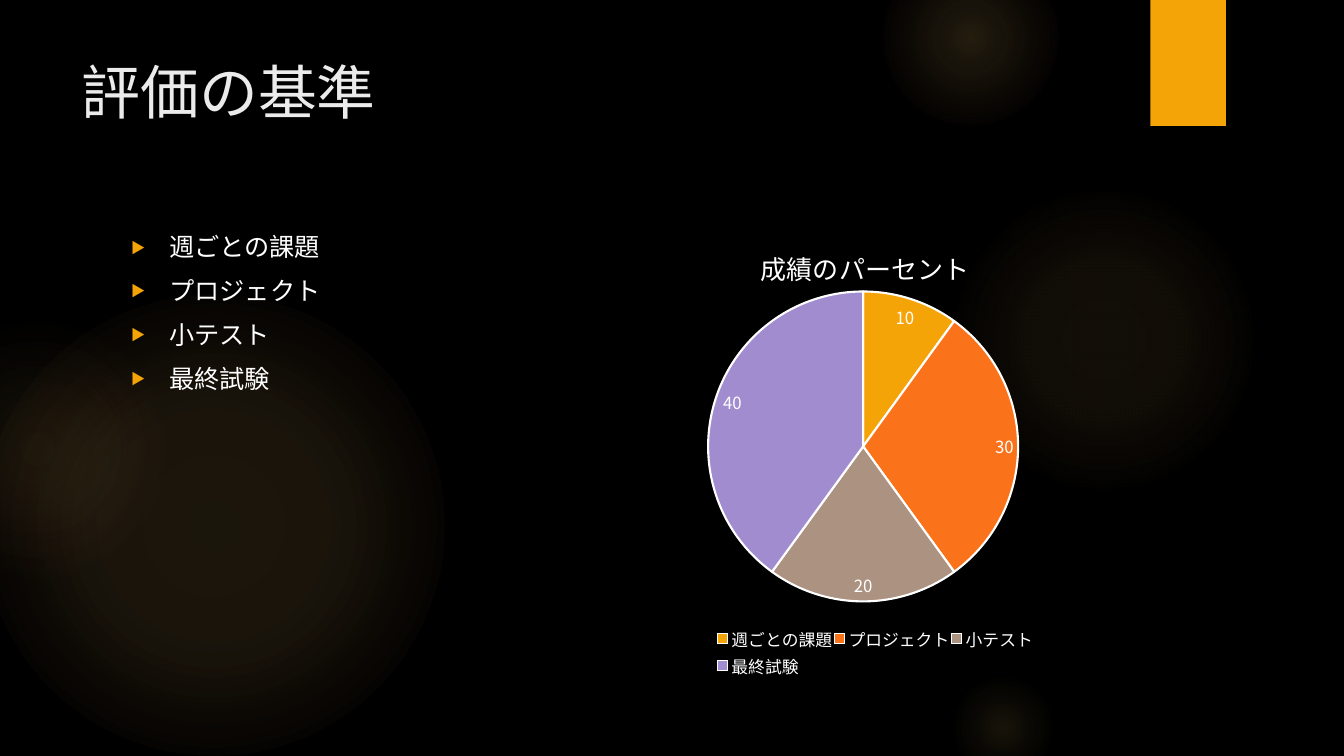
from dataclasses import dataclass

from lxml import etree
from pptx import Presentation
from pptx.chart.data import CategoryChartData
from pptx.dml.color import RGBColor
from pptx.enum.chart import XL_CHART_TYPE as ChartType
from pptx.enum.chart import XL_LABEL_POSITION as LabelPosition
from pptx.enum.chart import XL_LEGEND_POSITION as LegendPosition
from pptx.enum.shapes import MSO_SHAPE as Preset
from pptx.enum.text import MSO_ANCHOR as Anchor
from pptx.enum.text import PP_ALIGN as Align
from pptx.oxml import parse_xml
from pptx.oxml.ns import nsdecls, qn
from pptx.util import Inches, Pt


@dataclass(frozen=True)
class Theme:
    font: str = "Noto Sans CJK JP"
    background: str = "000000"
    heading: str = "EBEBEB"
    text: str = "FFFFFF"
    accent: str = "F5A408"
    glow: str = "FAC96A"
    glow_edge: str = "F59B74"
    slices: tuple = ("F5A408", "FA731A", "AB9281", "A18CD0")
    title_size: float = 42
    body_size: float = 18
    chart_title_size: float = 18.6
    chart_size: float = 12


THEME = Theme()
CRITERIA = {"週ごとの課題": 10, "プロジェクト": 30, "小テスト": 20, "最終試験": 40}
CHART_TITLE = "成績のパーセント"

# left, top, diameter, (stop %, opacity %) pairs, outer colour
GLOWS = [
    (-0.17, 2.92, 4.58, ((0, 11), (36, 10), (75, 0)), THEME.glow),
    (-0.92, 3.17, 2.58, ((0, 8), (36, 5), (71, 0)), THEME.glow_edge),
    (9.41, 1.83, 3.08, ((0, 7), (36, 6), (69, 0)), THEME.glow),
    (8.75, -0.5, 1.75, ((0, 14), (36, 7), (73, 0)), THEME.glow),
    (9.41, 6.67, 1.08, ((0, 10), (31, 5), (66, 0)), THEME.glow),
]


def set_all(target, values):
    for name, value in values.items():
        setattr(target, name, value)


def style_font(font, size, color):
    set_all(font, {"size": Pt(size), "name": THEME.font, "bold": False})
    font.color.rgb = RGBColor.from_string(color)


def write(para, text, size, color):
    span = para.add_run()
    span.text = text
    style_font(span.font, size, color)
    # East Asian text takes its own typeface entry
    east_asian = etree.SubElement(span.font._element, qn("a:ea"))
    east_asian.set("typeface", THEME.font)


def add_plain_shape(page, preset, left, top, width, height):
    shape = page.shapes.add_shape(
        preset, Inches(left), Inches(top), Inches(width), Inches(height))
    shape.shadow.inherit = False
    shape.line.fill.background()
    return shape


def add_glow(page, left, top, diameter, stops, edge):
    circle = add_plain_shape(page, Preset.OVAL, left, top, diameter, diameter)
    colors = (THEME.glow, THEME.glow, edge)
    stop_xml = "".join(
        f'<a:gs pos="{place * 1000}"><a:srgbClr val="{color}">'
        f'<a:alpha val="{opacity * 1000}"/></a:srgbClr></a:gs>'
        for (place, opacity), color in zip(stops, colors))
    gradient = parse_xml(
        f'<a:gradFill {nsdecls("a")}><a:gsLst>{stop_xml}</a:gsLst>'
        '<a:path path="circle"><a:fillToRect l="50000" t="50000" r="50000" b="50000"/>'
        '</a:path></a:gradFill>')
    circle._element.spPr.find(qn("a:prstGeom")).addnext(gradient)


def add_tab(page):
    tab = add_plain_shape(page, Preset.RECTANGLE, 11.41, 0, 0.75, 1.25)
    tab.fill.solid()
    tab.fill.fore_color.rgb = RGBColor.from_string(THEME.accent)
    effects = tab._element.spPr.find(qn("a:effectLst"))
    effects.append(parse_xml(
        f'<a:outerShdw {nsdecls("a")} blurRad="38100" dist="25400" dir="5400000">'
        '<a:srgbClr val="000000"><a:alpha val="45000"/></a:srgbClr></a:outerShdw>'))


def add_title(page, text):
    title = page.shapes.title
    set_all(title, {"left": Inches(0.71), "top": Inches(0.5),
                    "width": Inches(10.29), "height": Inches(1.53)})
    set_all(title.text_frame, {"vertical_anchor": Anchor.TOP, "word_wrap": True})
    para = title.text_frame.paragraphs[0]
    para.alignment = Align.LEFT
    write(para, text, THEME.title_size, THEME.heading)


def add_bullet(para):
    props = para._p.get_or_add_pPr()
    indent = Inches(0.38)
    props.set("marL", str(indent))
    props.set("indent", str(-indent))
    for xml in (f'<a:buClr {nsdecls("a")}><a:srgbClr val="{THEME.accent}"/></a:buClr>',
                f'<a:buSzPct {nsdecls("a")} val="57000"/>',
                f'<a:buFont {nsdecls("a")} typeface="{THEME.font}"/>',
                f'<a:buChar {nsdecls("a")} char="▶"/>'):
        props.append(parse_xml(xml))


def add_bullets(page, items):
    box = page.shapes.add_textbox(
        Inches(1.2), Inches(2.25), Inches(4.81), Inches(4.59))
    frame = box.text_frame
    frame.word_wrap = True
    for index, item in enumerate(items):
        para = frame.add_paragraph() if index else frame.paragraphs[0]
        set_all(para, {"space_before": Pt(3.6), "space_after": Pt(6)})
        add_bullet(para)
        write(para, item, THEME.body_size, THEME.text)


def manual_layout(target="", **place):
    sides = "".join(f'<c:{side} val="{value}"/>' for side, value in place.items())
    return parse_xml(
        f'<c:layout {nsdecls("c")}><c:manualLayout>{target}'
        f'<c:xMode val="edge"/><c:yMode val="edge"/>{sides}'
        '</c:manualLayout></c:layout>')


def drop_layout(element):
    for old in element.findall(qn("c:layout")):
        element.remove(old)


def place_plot(chart, **place):
    plot_area = chart._chartSpace.chart.plotArea
    drop_layout(plot_area)
    plot_area.insert(0, manual_layout('<c:layoutTarget val="inner"/>', **place))


def place_legend(legend, **place):
    element = legend._element
    drop_layout(element)
    element.find(qn("c:legendPos")).addnext(manual_layout(**place))


def add_pie(page, name, shares):
    data = CategoryChartData()
    data.categories = list(shares)
    data.add_series(name, list(shares.values()))
    chart = page.shapes.add_chart(
        ChartType.PIE, Inches(6.18), Inches(2.25), Inches(4.81), Inches(4.59),
        data).chart
    style_font(chart.font, THEME.chart_size, THEME.text)
    place_plot(chart, x=0.17, y=0.14, w=0.65, h=0.67)

    # Title and legend
    chart.has_title = True
    write(chart.chart_title.text_frame.paragraphs[0], name,
          THEME.chart_title_size, THEME.text)
    chart.has_legend = True
    set_all(chart.legend, {"position": LegendPosition.BOTTOM,
                           "include_in_layout": False})
    style_font(chart.legend.font, THEME.chart_size, THEME.text)
    place_legend(chart.legend, x=0.19, y=0.86, w=0.66, h=0.12)

    # Slices and their values
    plot = chart.plots[0]
    set_all(plot, {"vary_by_categories": True, "has_data_labels": True})
    set_all(plot.data_labels, {"show_value": True, "show_percentage": False,
                               "position": LabelPosition.BEST_FIT})
    style_font(plot.data_labels.font, THEME.chart_size, THEME.text)
    for index, color in enumerate(THEME.slices):
        look = plot.series[0].points[index].format
        look.fill.solid()
        look.fill.fore_color.rgb = RGBColor.from_string(color)
        look.line.color.rgb = RGBColor.from_string(THEME.text)
        look.line.width = Pt(1.5)


def main():
    deck = Presentation()
    set_all(deck, {"slide_width": Inches(13.33), "slide_height": Inches(7.5)})
    page = deck.slides.add_slide(deck.slide_layouts[5])
    page.background.fill.solid()
    page.background.fill.fore_color.rgb = RGBColor.from_string(THEME.background)

    # Backdrop
    for glow in GLOWS:
        add_glow(page, *glow)
    add_tab(page)

    # Content
    add_title(page, "評価の基準")
    add_bullets(page, CRITERIA)
    add_pie(page, CHART_TITLE, CRITERIA)
    deck.save("out.pptx")


if __name__ == "__main__":
    main()
